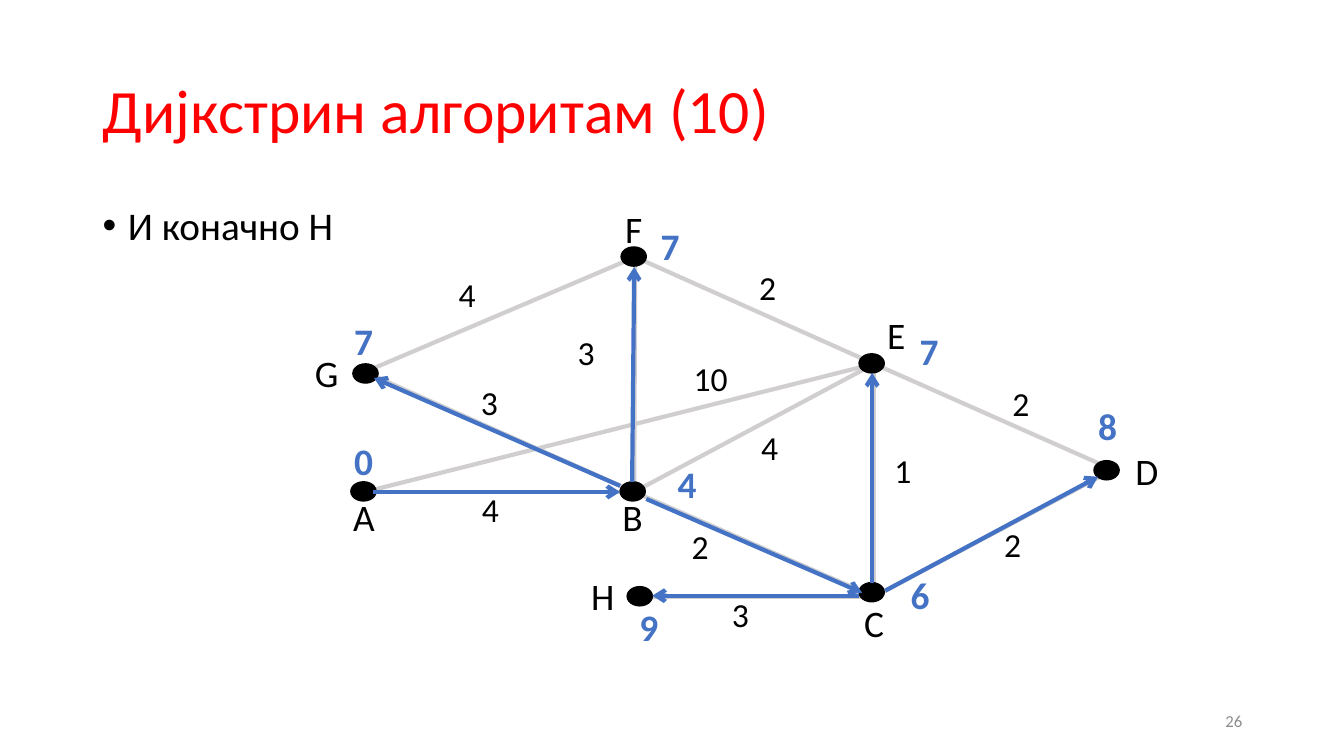
from pptx import Presentation
from pptx.dml.color import RGBColor
from pptx.enum.shapes import MSO_CONNECTOR as CONN, MSO_SHAPE as SHAPE
from pptx.enum.text import MSO_ANCHOR as ANCHOR, PP_ALIGN as ALIGN
from pptx.oxml.ns import qn
from pptx.util import Inches, Pt
from lxml.etree import SubElement

BLACK, RED, BLUE, GREY, PALE = "000000", "FF0000", "4472C4", "8C8C8C", "D0CECE"

TITLE = "Дијкстрин алгоритам (10)"
BULLET = "И коначно H"
PAGE = "26"

JOINTS = {
    "A": (3.62, 4.88), "B": (6.29, 4.88), "C": (8.67, 5.92), "D": (11.04, 4.66),
    "E": (8.67, 3.61), "F": (6.3, 2.55), "G": (3.62, 3.69), "H": (6.29, 5.92),
}
EDGES = ["AB", "BC", "CE", "BE", "AE", "BF", "BG", "GF", "FE", "ED", "CD", "CH"]
DOT_W, DOT_H = 0.25, 0.19
DOTS = [(10.85, 4.57), (6.16, 2.45), (6.15, 4.78), (8.52, 5.78),
        (8.52, 3.51), (3.5, 3.61), (6.22, 5.82), (3.48, 4.78)]
NAMES = [
    ("A", 3.4, 4.85, 0.42), ("B", 6.07, 4.85, 0.41), ("C", 8.47, 5.9, 0.4),
    ("D", 11.16, 4.39, 0.43), ("E", 8.7, 3.04, 0.38), ("F", 6.1, 1.99, 0.37),
    ("G", 3.02, 3.42, 0.44), ("H", 5.76, 5.63, 0.44),
]
WEIGHTS = [
    ("2", 7.46, 2.65), ("1", 8.8, 4.46), ("10", 6.81, 3.55), ("2", 9.89, 5.2),
    ("2", 9.97, 3.8), ("4", 7.48, 4.24), ("2", 6.79, 5.22), ("4", 4.71, 4.85),
    ("4", 4.48, 2.72), ("3", 4.7, 3.79), ("3", 5.66, 3.29), ("3", 7.19, 5.89),
]
DISTANCES = [
    ("0", 3.41, 4.3), ("7", 9.02, 3.21), ("4", 6.62, 4.53), ("6", 8.93, 5.63),
    ("7", 6.45, 2.16), ("7", 3.41, 3.11), ("8", 10.79, 3.95), ("9", 6.24, 5.94),
]
ARROWS = [
    ((3.7, 4.88), (6.15, 4.88)), ((6.41, 4.95), (8.55, 5.88)),
    ((6.15, 4.82), (3.71, 3.75)), ((8.65, 5.78), (8.65, 3.7)),
    ((6.27, 4.78), (6.29, 2.65)), ((8.78, 5.86), (10.89, 4.73)),
    ((8.52, 5.91), (6.47, 5.91)),
]

FRAME = {"word_wrap": True, "vertical_anchor": ANCHOR.MIDDLE}
TOP = {"word_wrap": True, "vertical_anchor": ANCHOR.TOP}
LABEL = {"word_wrap": False, "vertical_anchor": ANCHOR.MIDDLE}
MARK = {"word_wrap": False, "vertical_anchor": ANCHOR.TOP}
TIGHT = MARK | {"margin_left": Inches(0.07), "margin_right": Inches(0.07),
                "margin_top": 0, "margin_bottom": 0}
CENTER = {"alignment": ALIGN.CENTER}

prs = Presentation()
prs.slide_width, prs.slide_height = Inches(13.33), Inches(7.5)
s = prs.slides.add_slide(prs.slide_layouts[6])


def rgb(color):
    return RGBColor.from_string(color)


def apply(obj, values):
    for name, value in values.items():
        setattr(obj, name, value)


def text(words, box, size, color, frame, para, bold=False):
    tf = s.shapes.add_textbox(*map(Inches, box)).text_frame
    apply(tf, frame)
    p = tf.paragraphs[0]
    apply(p, para)
    r = p.add_run()
    r.text = words
    apply(r.font, {"name": "Calibri", "size": Pt(size), "bold": bold})
    r.font.color.rgb = rgb(color)
    return p


def line(start, end, color, arrow=False):
    sp = s.shapes.add_connector(CONN.STRAIGHT, *map(Inches, start + end))
    sp.line.color.rgb = rgb(color)
    sp.line.width = Pt(3)
    if arrow:
        SubElement(sp.line._get_or_add_ln(), qn("a:tailEnd"), type="arrow")
    SubElement(sp._element.spPr, qn("a:effectLst"))


def dot(x, y):
    sp = s.shapes.add_shape(SHAPE.OVAL, *map(Inches, (x, y, DOT_W, DOT_H)))
    sp.shadow.inherit = False
    sp.fill.solid()
    sp.fill.fore_color.rgb = rgb(BLACK)
    sp.line.color.rgb = rgb(BLACK)
    sp.line.width = Pt(1)


text(TITLE, (0.92, 0.4, 11.5, 1.45), 44, RED, FRAME, {"line_spacing": 0.9})
p = text(BULLET, (0.92, 2, 11.5, 4.76), 28, BLACK, TOP,
         {"line_spacing": 0.9, "space_before": Pt(10)})
pPr = p._p.get_or_add_pPr()
pPr.set("marL", str(Inches(0.25)))
pPr.set("indent", str(Inches(-0.25)))
SubElement(pPr, qn("a:buFont"), typeface="Arial")
SubElement(pPr, qn("a:buChar"), char="•")

for a, b in EDGES:
    line(JOINTS[a], JOINTS[b], PALE)
for x, y in DOTS:
    dot(x, y)
for name, x, y, w in NAMES:
    text(name, (x, y, w, 0.55), 26.7, BLACK, LABEL, CENTER)
for weight, x, y in WEIGHTS:
    text(weight, (x, y, 0.1 + 0.2 * len(weight), 0.4), 24, BLACK, TIGHT, {})
for distance, x, y in DISTANCES:
    text(distance, (x, y, 0.39, 0.55), 26.7, BLUE, MARK, CENTER, True)
for start, end in ARROWS:
    line(start, end, BLUE, True)

text(PAGE, (9.42, 6.95, 3, 0.4), 12, GREY, FRAME, {"alignment": ALIGN.RIGHT})

prs.save("out.pptx")
